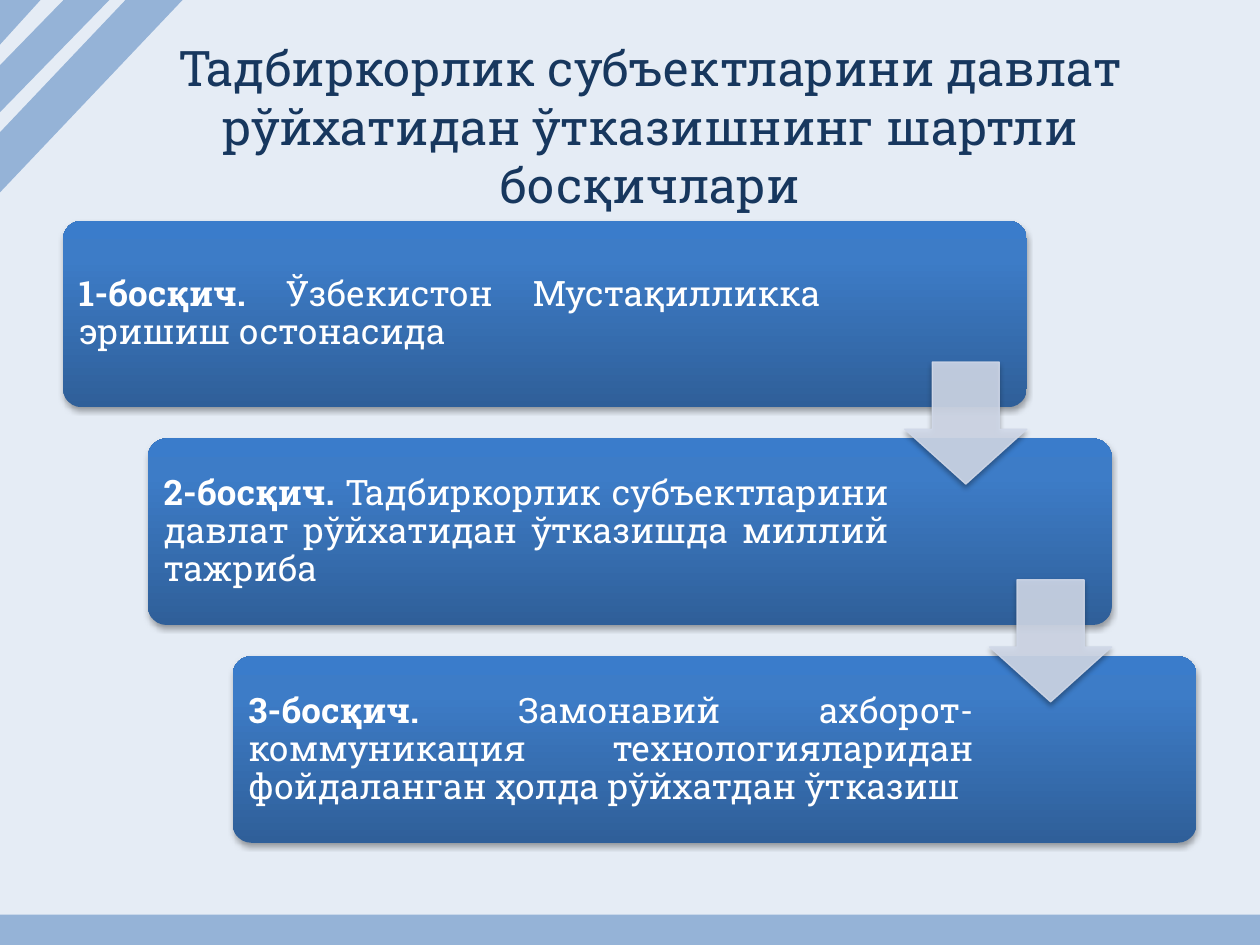
"""Build a slide with the three stages of business registration."""
import copy
import pptx
import pptx.dml.color
import pptx.enum.shapes
import pptx.enum.text
import pptx.oxml
import pptx.oxml.ns
import pptx.util
from lxml import etree

Cm = pptx.util.Cm
Pt = pptx.util.Pt
RGB = pptx.dml.color.RGBColor
KIND = pptx.enum.shapes.MSO_SHAPE
ALIGN = pptx.enum.text.PP_ALIGN
MID = pptx.enum.text.MSO_ANCHOR.MIDDLE
qn = pptx.oxml.ns.qn

FONT = "Roboto Slab"
PALE = RGB(0xE5, 0xEC, 0xF5)
NAVY = RGB(0x17, 0x37, 0x5E)
WHITE = RGB(0xFF, 0xFF, 0xFF)
STRIPE = RGB(0x95, 0xB3, 0xD7)
ARROW = RGB(0xD0, 0xD8, 0xE8)
DARK = RGB(0x2F, 0x5F, 0x99)
BLUE = RGB(0x3D, 0x7C, 0xC7)
LIGHT = RGB(0x3A, 0x7C, 0xCB)

SHADOW = (
    '<a:outerShdw xmlns:a="http://schemas.openxmlformats.org/drawingml/2006/main" '
    'blurRad="40000" dist="23000" dir="5400000" rotWithShape="0">'
    '<a:srgbClr val="000000"><a:alpha val="35000"/></a:srgbClr></a:outerShdw>'
)


def draw(kind, left, top, width, height, *adjust):
    shape = slide.shapes.add_shape(kind, Cm(left), Cm(top), Cm(width), Cm(height))
    shape.shadow.inherit = False
    shape.line.fill.background()
    for index, value in enumerate(adjust):
        shape.adjustments[index] = value
    return shape


def shade(shape):
    effect = shape._element.spPr.find(qn("a:effectLst"))
    effect.append(pptx.oxml.parse_xml(SHADOW))


deck = pptx.Presentation()
deck.slide_width, deck.slide_height = Cm(25.4), Cm(19.05)
slide = deck.slides.add_slide(deck.slide_layouts[5])
slide.background.fill.solid()
slide.background.fill.fore_color.rgb = PALE

title = slide.shapes.title
title.left, title.top, title.width, title.height = Cm(1.3), Cm(0.94), Cm(23.6), Cm(3.18)
frame = title.text_frame
frame.text = "Тадбиркорлик субъектларини давлат рўйхатидан ўтказишнинг шартли босқичлари"
frame.vertical_anchor = MID
frame.auto_size = pptx.enum.text.MSO_AUTO_SIZE.NONE
frame.paragraphs[0].alignment = ALIGN.CENTER
font = frame.paragraphs[0].runs[0].font
font.name, font.size, font.color.rgb = FONT, Pt(28), NAVY

STAGES = [
    ("1-босқич.", " Ўзбекистон Мустақилликка эришиш остонасида", 15.37),
    ("2-босқич.", " Тадбиркорлик субъектларини давлат рўйхатидан ўтказишда миллий тажриба", 15.04),
    ("3-босқич.", " Замонавий ахборот-коммуникация технологияларидан фойдаланган ҳолда рўйхатдан ўтказиш", 15.04),
]
STEP_X, STEP_Y = 1.71, 4.39

for row, (head, body, width) in enumerate(STAGES):
    left, top = 1.27 + row * STEP_X, 4.45 + row * STEP_Y
    card = draw(KIND.ROUNDED_RECTANGLE, left, top, 19.43, 3.76, 0.1)
    card.fill.gradient()
    card.fill.gradient_angle = 90
    stops = card.fill._fill._gradFill.find(qn("a:gsLst"))
    stops.append(copy.deepcopy(stops[-1]))
    for stop, place, color in zip(card.fill.gradient_stops, (0, 0.8, 1), (DARK, BLUE, LIGHT)):
        stop.position, stop.color.rgb = place, color
    shade(card)

    label = slide.shapes.add_textbox(Cm(left + 0.11), Cm(top + 0.11), Cm(width), Cm(3.56))
    frame = label.text_frame
    frame.word_wrap = True
    frame.vertical_anchor = MID
    frame.margin_left = frame.margin_right = Cm(0.21)
    frame.margin_top = frame.margin_bottom = Cm(0.21)
    para = frame.paragraphs[0]
    para.text = head
    para.add_run().text = body
    para.alignment = ALIGN.JUSTIFY
    para.line_spacing = 0.9
    for run, bold in zip(para.runs, (True, False)):
        run.font.name, run.font.size, run.font.bold = FONT, Pt(20), bold
        run.font.color.rgb = WHITE

for row in range(len(STAGES) - 1):
    arrow = draw(KIND.DOWN_ARROW, 18.24 + row * STEP_X, 7.3 + row * STEP_Y, 2.46, 2.46, 0.55, 0.45)
    arrow.line.width = Pt(0.75)
    for fill in (arrow.fill, arrow.line.fill):
        fill.solid()
        fill.fore_color.rgb = ARROW
    for color in arrow._element.spPr.iter(qn("a:srgbClr")):
        etree.SubElement(color, qn("a:alpha")).set("val", "90000")
    shade(arrow)

DECOR = [
    (KIND.RECTANGLE, 0, (0, 18.44, 25.4, 0.61)),
    (KIND.DIAGONAL_STRIPE, 3.4, (-0.05, -0.13, 2.24, 2.59, 0.61)),
    (KIND.DIAGONAL_STRIPE, 0, (0, -0.03, 3.71, 3.91, 0.69)),
    (KIND.RIGHT_TRIANGLE, 90, (-0.15, -0.03, 1.09, 0.99)),
]
for kind, turn, place in DECOR:
    band = draw(kind, *place)
    band.rotation = turn
    band.fill.solid()
    band.fill.fore_color.rgb = STRIPE

deck.save("out.pptx")
